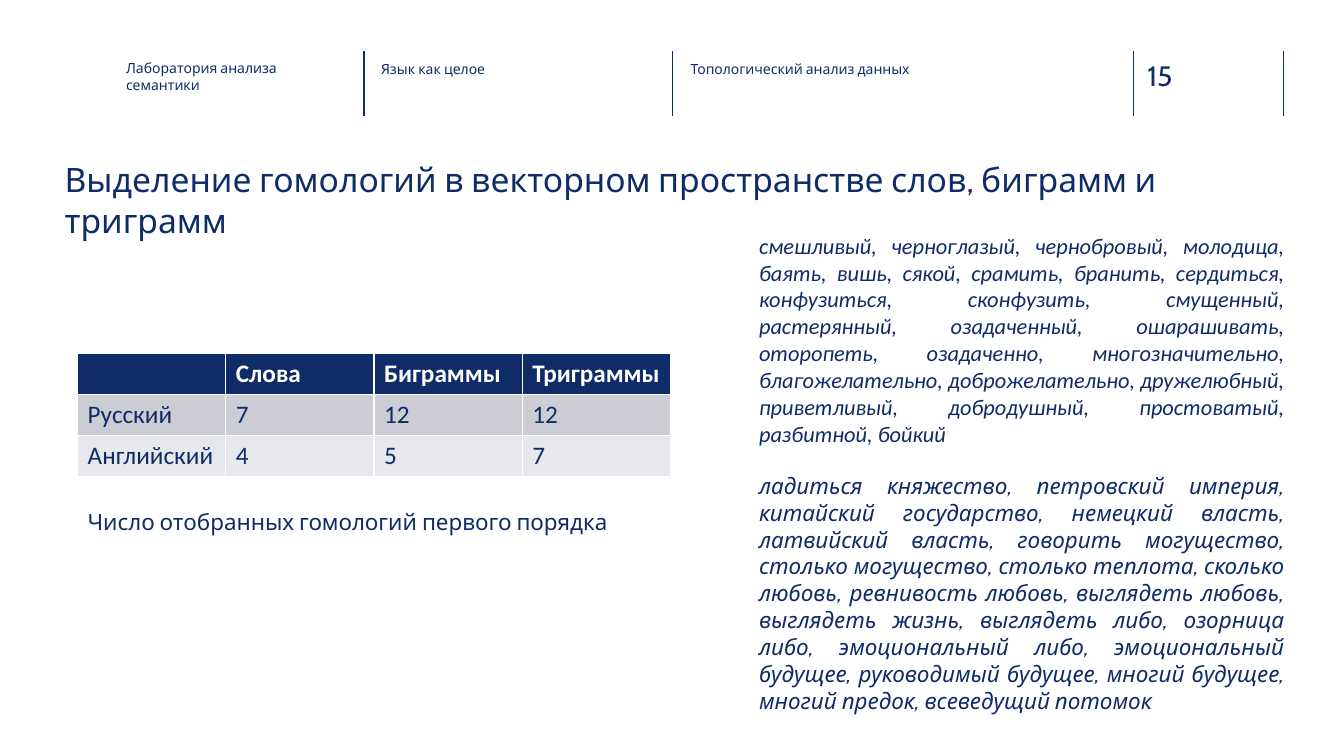
import pptx
import pptx.dml.color
import pptx.enum.shapes
import pptx.enum.text
import pptx.oxml
import pptx.util
from pptx.util import Inches

NAVY = "0F2C68"
HEADER_NAVY = "102D69"
ALIGN = pptx.enum.text.PP_ALIGN


def rgb(value):
    return pptx.dml.color.RGBColor.from_string(value)


def write(frame, paragraphs, size, color=NAVY, align=ALIGN.LEFT, inset=0.0, gap=0):
    """Fill a text frame; each paragraph is (text, font name, italic)."""
    frame.word_wrap = True
    frame.auto_size = pptx.enum.text.MSO_AUTO_SIZE.NONE
    frame.vertical_anchor = pptx.enum.text.MSO_ANCHOR.TOP
    frame.margin_left = frame.margin_right = Inches(inset)
    frame.margin_top = frame.margin_bottom = Inches(inset / 2)
    for index, (text, font_name, italic) in enumerate(paragraphs):
        paragraph = frame.add_paragraph() if index else frame.paragraphs[0]
        paragraph.alignment = align
        if index:
            paragraph.space_before = pptx.util.Pt(gap)
        run = paragraph.add_run()
        run.text = text
        run.font.name = font_name
        run.font.size = pptx.util.Pt(size)
        run.font.italic = italic
        run.font.color.rgb = rgb(color)


deck = pptx.Presentation()
deck.slide_width, deck.slide_height = Inches(13.33), Inches(7.5)
slide = deck.slides.add_slide(deck.slide_layouts[5])
shapes = slide.shapes

# Header dividers
for x in (3.61, 6.67, 11.24, 12.73):
    divider = shapes.add_connector(
        pptx.enum.shapes.MSO_CONNECTOR.STRAIGHT,
        Inches(x), Inches(0.51), Inches(x), Inches(1.15))
    divider.line.color.rgb = rgb(HEADER_NAVY)
    divider.line.width = pptx.util.Pt(1)
    divider._element.spPr.append(pptx.oxml.parse_xml(
        '<a:effectLst xmlns:a="http://schemas.openxmlformats.org/drawingml/2006/main"/>'))

# Header labels and page number
for text, left, top, width, height, size in (
    ("Лаборатория анализа семантики", 1.25, 0.59, 2.08, 0.45, 10),
    ("Язык как целое", 3.78, 0.6, 2.26, 0.45, 10),
    ("Топологический анализ данных", 6.85, 0.6, 2.26, 0.45, 10),
    ("15", 11.38, 0.58, 0.73, 0.34, 20),
):
    label = shapes.add_textbox(Inches(left), Inches(top), Inches(width), Inches(height))
    write(label.text_frame, [(text, "Cabin", False)], size, HEADER_NAVY)

# Title
title = shapes.title
title.left, title.top = Inches(0.64), Inches(1.58)
title.width, title.height = Inches(12.09), Inches(0.85)
write(title.text_frame, [(
    "Выделение гомологий в векторном пространстве слов, биграмм и триграмм",
    "Cabin", False)], 24)

# Table of homology counts
counts = [
    ("", "Слова", "Биграммы", "Триграммы"),
    ("Русский", "7", "12", "12"),
    ("Английский", "4", "5", "7"),
]
row_fills = (NAVY, "CCCDD4", "E7E8EB")
homologies = shapes.add_table(
    3, 4, Inches(0.77), Inches(3.51), Inches(5.88), Inches(1.22)).table
for row, (values, fill) in enumerate(zip(counts, row_fills)):
    for column, value in enumerate(values):
        cell = homologies.cell(row, column)
        cell.fill.solid()
        cell.fill.fore_color.rgb = rgb(fill)
        if not value:
            continue
        run = cell.text_frame.paragraphs[0].add_run()
        run.text = value
        run.font.name = "Calibri"
        run.font.size = pptx.util.Pt(18)
        run.font.bold = row == 0
        run.font.color.rgb = rgb(NAVY if row else "FFFFFF")

# Table caption
caption = shapes.add_textbox(Inches(0.77), Inches(4.99), Inches(5.71), Inches(0.37))
write(caption.text_frame,
      [("Число отобранных гомологий первого порядка", "Cabin", False)],
      16, align=ALIGN.JUSTIFY, inset=0.1)

# Word and bigram examples
word_example = (
    "смешливый, черноглазый, чернобровый, молодица, баять, вишь, сякой, срамить, "
    "бранить, сердиться, конфузиться, сконфузить, смущенный, растерянный, "
    "озадаченный, ошарашивать, оторопеть, озадаченно, многозначительно, "
    "благожелательно, доброжелательно, дружелюбный, приветливый, добродушный, "
    "простоватый, разбитной, бойкий")
bigram_example = (
    "ладиться княжество, петровский империя, китайский государство, немецкий "
    "власть, латвийский власть, говорить могущество, столько могущество, столько "
    "теплота, сколько любовь, ревнивость любовь, выглядеть любовь, выглядеть "
    "жизнь, выглядеть либо, озорница либо, эмоциональный либо, эмоциональный "
    "будущее, руководимый будущее, многий будущее, многий предок, всеведущий "
    "потомок")
examples = shapes.add_textbox(Inches(7.43), Inches(2.25), Inches(5.41), Inches(4.95))
write(examples.text_frame,
      [(word_example, "Calibri", True), (bigram_example, "Cabin", True)],
      16, align=ALIGN.JUSTIFY, inset=0.1, gap=18)

deck.save("out.pptx")
